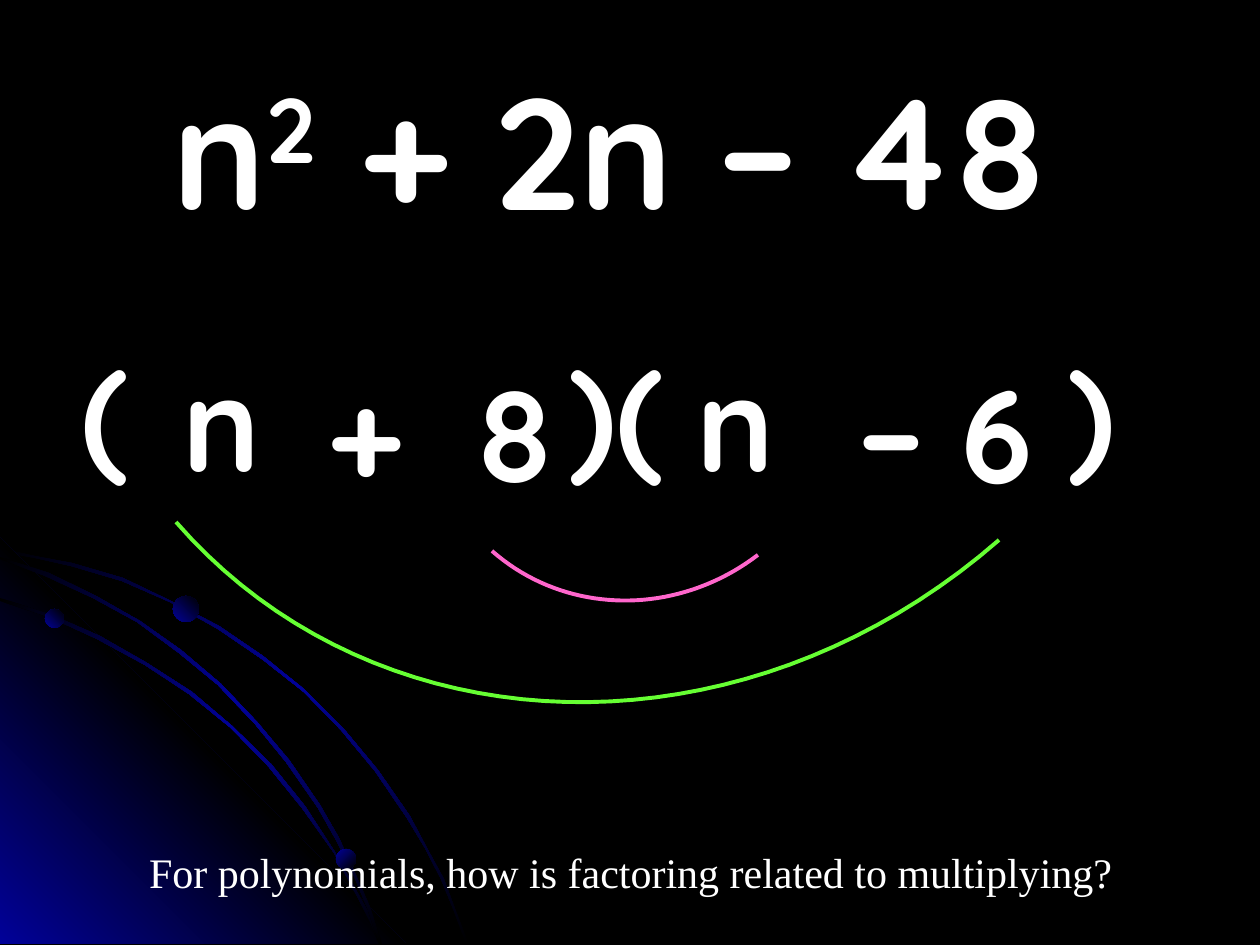
from lxml.etree import SubElement
from pptx import Presentation
from pptx.dml.color import RGBColor
from pptx.enum.shapes import MSO_SHAPE
from pptx.enum.text import MSO_ANCHOR, PP_ALIGN
from pptx.oxml.ns import qn
from pptx.util import Pt

EMU_PER_PX = 914400 / 126
BLACK = RGBColor(0x00, 0x00, 0x00)
WHITE = RGBColor(0xFF, 0xFF, 0xFF)
NAVY = RGBColor(0x01, 0x01, 0x99)
GREEN = RGBColor(0x66, 0xFF, 0x33)
PINK = RGBColor(0xFF, 0x66, 0xCC)
MATH_FONT, BODY_FONT = "Quicksand", "Times New Roman"

# Outlines of the curved ribbons in the lower left corner
RIBBON_OUTER = [
    (72, 563), (35, 556), (0, 548), (0, 552), (35, 558), (71, 566), (122, 581),
    (170, 602), (218, 629), (262, 659), (304, 692), (341, 730), (375, 771),
    (407, 818), (425, 848), (441, 879), (454, 911), (466, 944), (469, 944),
    (456, 911), (444, 879), (427, 848), (410, 816), (378, 770), (343, 728),
    (305, 690), (263, 656), (219, 626), (171, 601), (123, 578)]
RIBBON_INNER = [
    (359, 900), (370, 922), (379, 944), (382, 944), (373, 920), (360, 897),
    (335, 852), (305, 806), (271, 764), (232, 726), (192, 692), (147, 663),
    (100, 636), (52, 615), (0, 598), (0, 601), (49, 617), (97, 639), (145, 665),
    (189, 694), (231, 728), (268, 766), (302, 808), (334, 853)]
RIBBON_MIDDLE = [
    (0, 557), (0, 559), (45, 576), (93, 598), (137, 622), (179, 653), (218, 685),
    (255, 724), (286, 762), (318, 808), (336, 840), (353, 874), (368, 910),
    (379, 944), (382, 944), (370, 907), (355, 873), (339, 838), (320, 805),
    (289, 760), (257, 722), (221, 684), (181, 650), (140, 621), (96, 596), (49, 573)]


def px(length):
    return round(length * EMU_PER_PX)


def add_span(para, text, font=MATH_FONT, size=75, bold=True, color=WHITE, baseline=0):
    span = para.add_run()
    span.text = text
    span.font.name, span.font.size, span.font.bold = font, Pt(size), bold
    span.font.color.rgb = color
    if baseline:
        span.font._element.set("baseline", str(baseline * 1000))


def bezier(start, first, second, end, steps=40):
    points = []
    for step in range(steps + 1):
        t = step / steps
        weights = ((1 - t) ** 3, 3 * t * (1 - t) ** 2, 3 * t * t * (1 - t), t ** 3)
        points.append(tuple(
            sum(weight * value for weight, value in zip(weights, values))
            for values in zip(start, first, second, end)))
    return points


class SlideBuilder:
    def __init__(self, page):
        self.page = page
        page.background.fill.solid()
        page.background.fill.fore_color.rgb = BLACK

    def gradient(self, shape, colors, angle):
        shape.shadow.inherit = False
        shape.line.fill.background()
        shape.fill.gradient()
        grad = shape._element.spPr.find(qn("a:gradFill"))
        for child in list(grad):
            grad.remove(child)
        stops = SubElement(grad, qn("a:gsLst"))
        for index, color in enumerate(colors):
            position = 100000 * index // (len(colors) - 1)
            stop = SubElement(stops, qn("a:gs"), pos=str(position))
            SubElement(stop, qn("a:srgbClr"), val=str(color))
        SubElement(grad, qn("a:lin"), ang=str(angle * 60000), scaled="0")

    def outline(self, points, close):
        start, *others = [(px(x), px(y)) for x, y in points]
        builder = self.page.shapes.build_freeform(*start)
        builder.add_line_segments(others, close=close)
        return builder.convert_to_shape()

    def area(self, points, colors, angle):
        self.gradient(self.outline(points, True), colors, angle)

    def dot(self, left, top, size, angle):
        shape = self.page.shapes.add_shape(
            MSO_SHAPE.OVAL, px(left), px(top), px(size), px(size))
        self.gradient(shape, (NAVY, BLACK), angle)

    def arc(self, controls, color):
        shape = self.outline(bezier(*controls), False)
        shape.shadow.inherit = False
        shape.fill.background()
        shape.line.color.rgb = color
        shape.line.width = Pt(2.25)

    def text(self, left, top, width, height, *parts, anchor=MSO_ANCHOR.MIDDLE,
             inset=13, tabs=(), **style):
        box = self.page.shapes.add_textbox(px(left), px(top), px(width), px(height))
        frame = box.text_frame
        frame.word_wrap = True
        frame.vertical_anchor = anchor
        frame.margin_left = px(inset)
        para = frame.paragraphs[0]
        para.alignment = PP_ALIGN.LEFT if tabs else PP_ALIGN.CENTER
        if tabs:
            frame.margin_right = 0
            frame.word_wrap = False
            stops = SubElement(para._p.get_or_add_pPr(), qn("a:tabLst"))
            for tab in tabs:
                SubElement(stops, qn("a:tab"), pos=str(px(tab)), algn="l")
            frame.word_wrap = True
        for text, baseline in parts:
            add_span(para, text, baseline=baseline, **style)


def main():
    deck = Presentation()
    deck.slide_width, deck.slide_height = px(1260), px(945)
    slide = SlideBuilder(deck.slides.add_slide(deck.slide_layouts[6]))

    # Corner decoration
    glow = (BLACK, NAVY, BLACK)
    slide.area(RIBBON_OUTER, glow, 45)
    slide.area([(406, 944), (0, 944), (0, 538)], (NAVY, BLACK, NAVY), 315)
    slide.area(RIBBON_INNER, glow, 45)
    slide.area(RIBBON_MIDDLE, glow, 45)
    slide.dot(45, 609, 19, 315)
    slide.dot(336, 849, 20, 45)
    slide.dot(173, 596, 26, 315)

    # Polynomial and question
    slide.text(53, 32, 1113, 231, ("n", 0), ("2", 30), (" + 2n – 48", 0), size=90)
    slide.text(53, 840, 1155, 63,
               ("For polynomials, how is factoring related to multiplying?", 0),
               anchor=MSO_ANCHOR.TOP, font=BODY_FONT, size=24, bold=False)

    # Brackets of the two factors
    slide.text(42, 294, 1113, 231, ("(\t)(\t)", 0), inset=40, tabs=(488, 986))

    # Arcs joining outer and inner terms
    slide.arc([(999, 540), (741, 765), (377, 753), (176, 522)], GREEN)
    slide.arc([(758, 555), (677, 617), (566, 616), (492, 551)], PINK)

    # Terms inside the brackets
    for left in (95, 609):
        slide.text(left, 305, 252, 231, ("n", 0))
    slide.text(819, 315, 252, 231, ("– 6", 0))
    slide.text(315, 315, 252, 231, ("+\t8", 0), tabs=(149,))

    deck.save("out.pptx")


if __name__ == "__main__":
    main()
